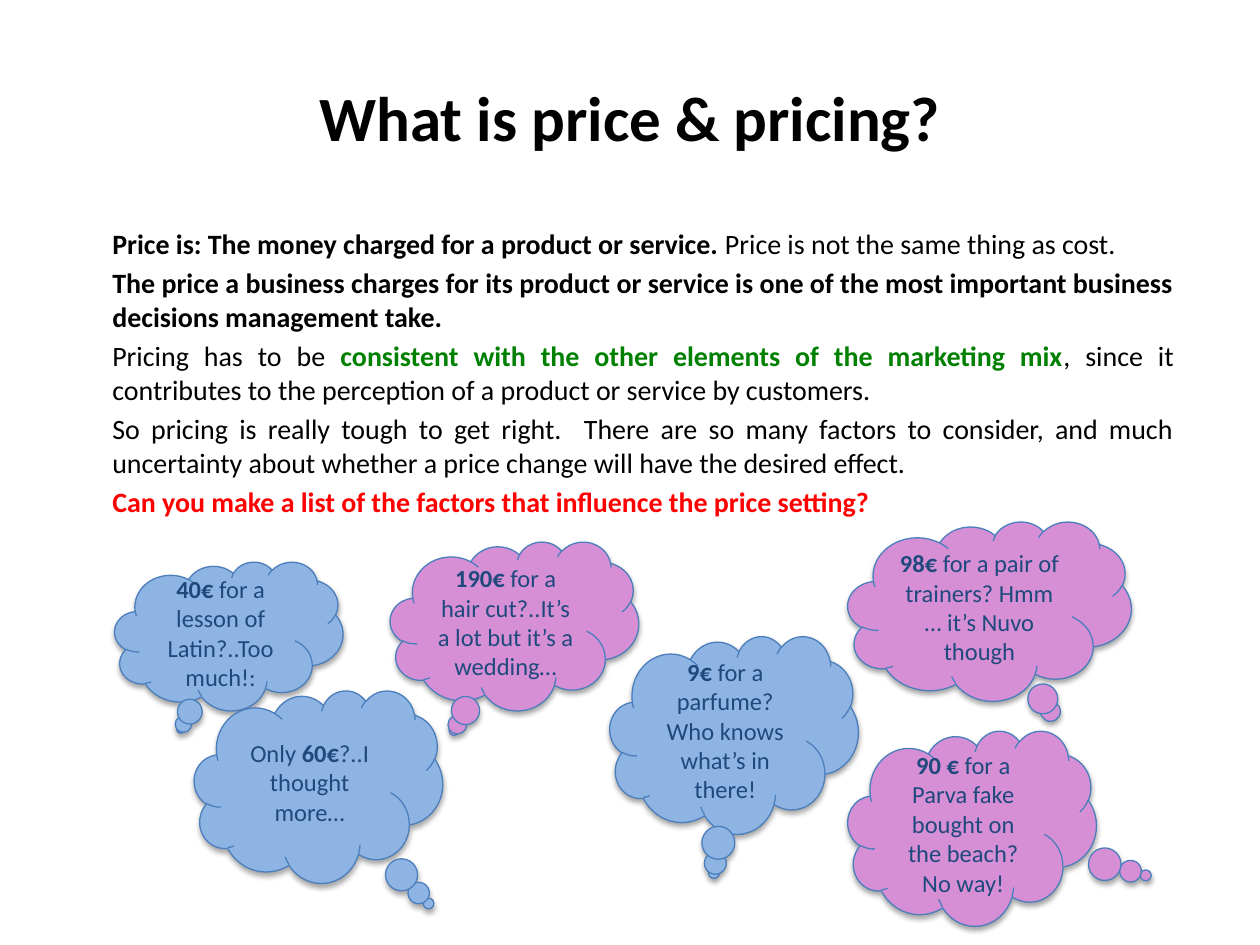
from lxml.etree import SubElement
from pptx import Presentation
from pptx.dml.color import RGBColor
from pptx.enum.shapes import MSO_SHAPE as Shape
from pptx.enum.text import MSO_ANCHOR as Anchor, MSO_AUTO_SIZE as AutoSize, PP_ALIGN as Align
from pptx.oxml.ns import qn
from pptx.util import Pt

COLORS = {
    "black": "000000",
    "green": "008000",
    "red": "FF0000",
    "blue": "8EB4E3",
    "pink": "D68FD5",
    "outline": "4B7EBC",
    "navy": "1F497D",
}

BODY = [
    [("Price is: The money charged for a product or service. ", True),
     ("Price is not the same thing as cost.", False)],
    [("The price a business charges for its product or service is one of the most "
      "important business decisions management take.", True)],
    [("Pricing has to be ", False),
     ("consistent with the other elements of the marketing mix", True, "green"),
     (", since it contributes to the perception of a product or service by customers.", False)],
    [("So pricing is really tough to get right.  There are so many factors to consider, and much "
      "uncertainty about whether a price change will have the desired effect.", False)],
    [("Can you make a list of the factors that influence the price setting?", True, "red")],
]

CLOUDS = [
    ((65.5, 321, 130.5, 85), (-0.21, 0.625), "blue",
     [("40€ ", True), ("for a lesson of Latin?..Too much!:", False)]),
    ((223, 309.5, 142, 96.5), (-0.244, 0.62), "pink",
     [("190€ ", True), ("for a hair cut?..It’s a lot but it’s a wedding…", False)]),
    ((484.5, 298, 162, 102.5), (0.223, 0.581), "pink",
     [("98€ ", True), ("for a pair of trainers? Hmm … it’s Nuvo though", False)]),
    ((348.5, 363.5, 142, 113), (-0.081, 0.698), "blue",
     [("9€ ", True), ("for a parfume? Who knows what’s in there!", False)]),
    ((111, 394.5, 142, 110), (0.443, 0.607), "blue",
     [("Only ", False), ("60€", True), ("?..I thought more…", False)]),
    ((484.5, 417.5, 142, 111.5), (0.699, 0.242), "pink",
     [("90 € ", True), ("for a Parva fake bought on the beach? No way!", False)]),
]


def rgb(name):
    """Return the palette colour with the given name."""
    return RGBColor.from_string(COLORS[name])


def write_runs(paragraph, runs, size, color="black", align=Align.CENTER, font="Calibri"):
    """Fill a paragraph with runs of text, weight and optional colour."""
    paragraph.alignment = align
    for text, bold, *own_color in runs:
        run = paragraph.add_run()
        run.text = text
        run.font.name = font
        run.font.size = Pt(size)
        run.font.bold = bold
        run.font.color.rgb = rgb(own_color[0] if own_color else color)


class SlideBuilder:
    """Hold the style and the current slide."""

    title_size = 36
    body_size = 16
    cloud_size = 14

    def __init__(self, presentation):
        """Add a title and content slide."""
        self.slide = presentation.slides.add_slide(presentation.slide_layouts[1])

    def place(self, shape, box, anchor):
        """Move a placeholder and return its text frame."""
        shape.left, shape.top, shape.width, shape.height = map(Pt, box)
        frame = shape.text_frame
        frame.word_wrap = True
        frame.auto_size = AutoSize.NONE
        frame.vertical_anchor = anchor
        return frame

    def title(self, text, box):
        """Write the slide title."""
        frame = self.place(self.slide.shapes.title, box, Anchor.MIDDLE)
        write_runs(frame.paragraphs[0], [(text, True)], self.title_size)

    def body(self, paragraphs, box):
        """Write the justified paragraphs without bullets."""
        frame = self.place(self.slide.placeholders[1], box, Anchor.TOP)
        for index, runs in enumerate(paragraphs):
            paragraph = frame.add_paragraph() if index else frame.paragraphs[0]
            properties = paragraph._p.get_or_add_pPr()
            properties.set("marL", str(Pt(27)))
            properties.set("indent", "0")
            SubElement(properties, qn("a:buNone"))
            paragraph.space_before = Pt(3.2 if index else 0)
            write_runs(paragraph, runs, self.body_size, align=Align.JUSTIFY)

    def shadow(self, shape):
        """Give a shape a soft shadow straight below it."""
        shape.shadow.inherit = False
        effects = shape._element.spPr.find(qn("a:effectLst"))
        outer = SubElement(effects, qn("a:outerShdw"), blurRad=str(Pt(3.1)),
                           dist=str(Pt(1.8)), dir="5400000", rotWithShape="0")
        color = SubElement(outer, qn("a:srgbClr"), val=COLORS["black"])
        SubElement(color, qn("a:alpha"), val="35000")

    def cloud(self, box, tail, fill, runs):
        """Draw a thought cloud with its tail and text."""
        shape = self.slide.shapes.add_shape(Shape.CLOUD_CALLOUT, *map(Pt, box))
        for index, value in enumerate(tail):
            shape.adjustments[index] = value
        shape.fill.solid()
        shape.fill.fore_color.rgb = rgb(fill)
        shape.line.color.rgb = rgb("outline")
        shape.line.width = Pt(0.75)
        self.shadow(shape)
        frame = shape.text_frame
        frame.word_wrap = True
        frame.vertical_anchor = Anchor.MIDDLE
        write_runs(frame.paragraphs[0], runs, self.cloud_size, color="navy")


def main():
    """Build and save the slide."""
    presentation = Presentation()
    presentation.slide_width, presentation.slide_height = Pt(720), Pt(540)
    builder = SlideBuilder(presentation)
    builder.title("What is price & pricing?", (36, 21.6, 648, 90))
    builder.body(BODY, (30, 126, 648, 356.5))
    for cloud in CLOUDS:
        builder.cloud(*cloud)
    presentation.save("out.pptx")


if __name__ == "__main__":
    main()
